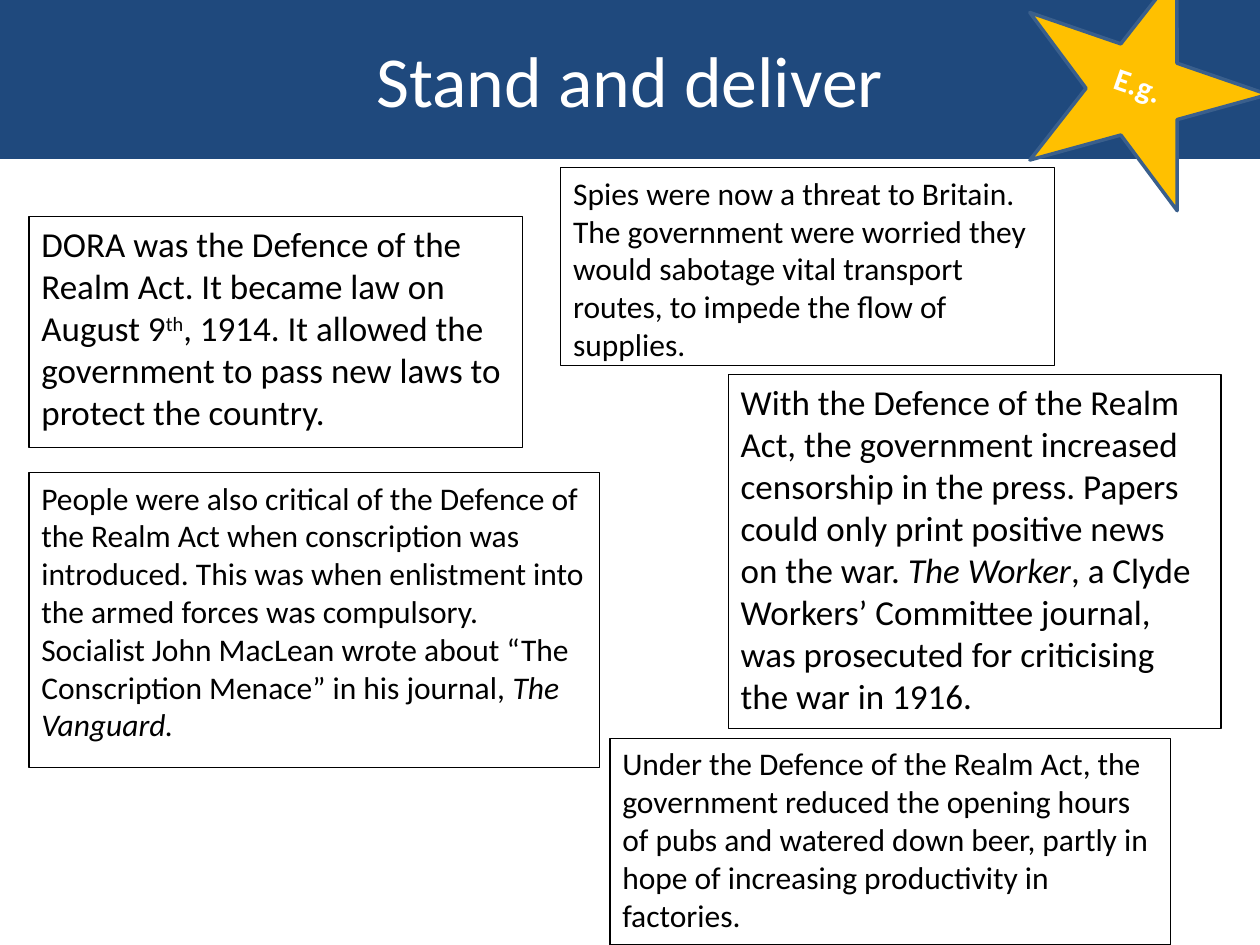
from pptx import Presentation
from pptx.dml.color import RGBColor
from pptx.enum.shapes import MSO_SHAPE as SHAPE
from pptx.enum.text import MSO_ANCHOR as ANCHOR, MSO_AUTO_SIZE as AUTO, PP_ALIGN as ALIGN
from pptx.util import Inches, Pt

NAVY = RGBColor(0x1F, 0x49, 0x7D)
GOLD = RGBColor(0xFF, 0xC0, 0x00)
STAR_EDGE = RGBColor(0x3A, 0x5F, 0x8C)
WHITE = RGBColor(0xFF, 0xFF, 0xFF)
BLACK = RGBColor(0, 0, 0)


def add_text(p, text, size=18, color=BLACK, bold=False, style=None):
    r = p.add_run()
    r.text = text
    f = r.font
    f.name, f.size, f.bold = "Calibri", Pt(size), bold
    f.color.rgb = color
    f.italic = style == "italic"
    if style == "super":
        r._r.get_or_add_rPr().set("baseline", "30000")


def paint(sp, fill, line=None, width=0.75):
    sp.fill.solid()
    sp.fill.fore_color.rgb = fill
    if line is None:
        sp.line.fill.background()
    else:
        sp.line.color.rgb = line
        sp.line.width = Pt(width)


prs = Presentation()
prs.slide_width, prs.slide_height = Inches(10), Inches(7.5)
s = prs.slides.add_slide(prs.slide_layouts[5])

# Title band
title = s.shapes.title
title.left, title.top = Inches(0), Inches(0)
title.width, title.height = Inches(10), Inches(1.25)
paint(title, NAVY, NAVY, 2)
tf = title.text_frame
tf.auto_size = AUTO.NONE
tf.vertical_anchor = ANCHOR.MIDDLE
p = tf.paragraphs[0]
p.alignment = ALIGN.CENTER
add_text(p, "Stand and deliver", size=41, color=WHITE)

# Fact boxes: position, text size, (text, style) pieces
facts = [
    ((5.78, 2.97, 3.91, 2.81), 20, [
        ("With the Defence of the Realm Act, the government increased censorship in the "
         "press. Papers could only print positive news on the war. ", None),
        ("The Worker", "italic"),
        (", a Clyde Workers’ Committee journal, was prosecuted for criticising the war "
         "in 1916.", None)]),
    ((0.23, 3.75, 4.53, 2.34), 18, [
        ("People were also critical of the Defence of the Realm Act when conscription was "
         "introduced. This was when enlistment into the armed forces was compulsory. "
         "Socialist John MacLean wrote about “The Conscription Menace” in his journal, ",
         None),
        ("The Vanguard.", "italic")]),
    ((0.23, 1.72, 3.92, 1.83), 20, [
        ("DORA was the Defence of the Realm Act. It became law on August 9", None),
        ("th", "super"),
        (", 1914. It allowed the government to pass new laws to protect the country.",
         None)]),
    ((4.45, 1.33, 3.92, 1.57), 18, [
        ("Spies were now a threat to Britain. The government were worried they would "
         "sabotage vital transport routes, to impede the flow of supplies.", None)]),
    ((4.84, 5.86, 4.45, 1.64), 18, [
        ("Under the Defence of the Realm Act, the government reduced the opening hours of "
         "pubs and watered down beer, partly in hope of increasing productivity in "
         "factories.", None)]),
]
for box, size, pieces in facts:
    sp = s.shapes.add_textbox(*map(Inches, box))
    paint(sp, WHITE, BLACK)
    tf = sp.text_frame
    tf.word_wrap = True
    p = tf.paragraphs[0]
    p.space_after = Pt(10)
    for text, style in pieces:
        add_text(p, text, size=size, style=style)

# Example star with its label, both tilted
badge = s.shapes.add_group_shape()
star = badge.shapes.add_shape(SHAPE.STAR_5_POINT, Inches(8.05), Inches(-0.27),
                              Inches(2), Inches(1.79))
star.shadow.inherit = False
paint(star, GOLD, STAR_EDGE, 2)
label = badge.shapes.add_textbox(Inches(8.74), Inches(0.47), Inches(0.58), Inches(0.41))
paint(label, GOLD)
star.rotation = label.rotation = 19
tf = label.text_frame
tf.word_wrap = True
tf.auto_size = AUTO.SHAPE_TO_FIT_TEXT
p = tf.paragraphs[0]
p.alignment = ALIGN.RIGHT
add_text(p, "E.g.", color=WHITE, bold=True)

prs.save("out.pptx")
